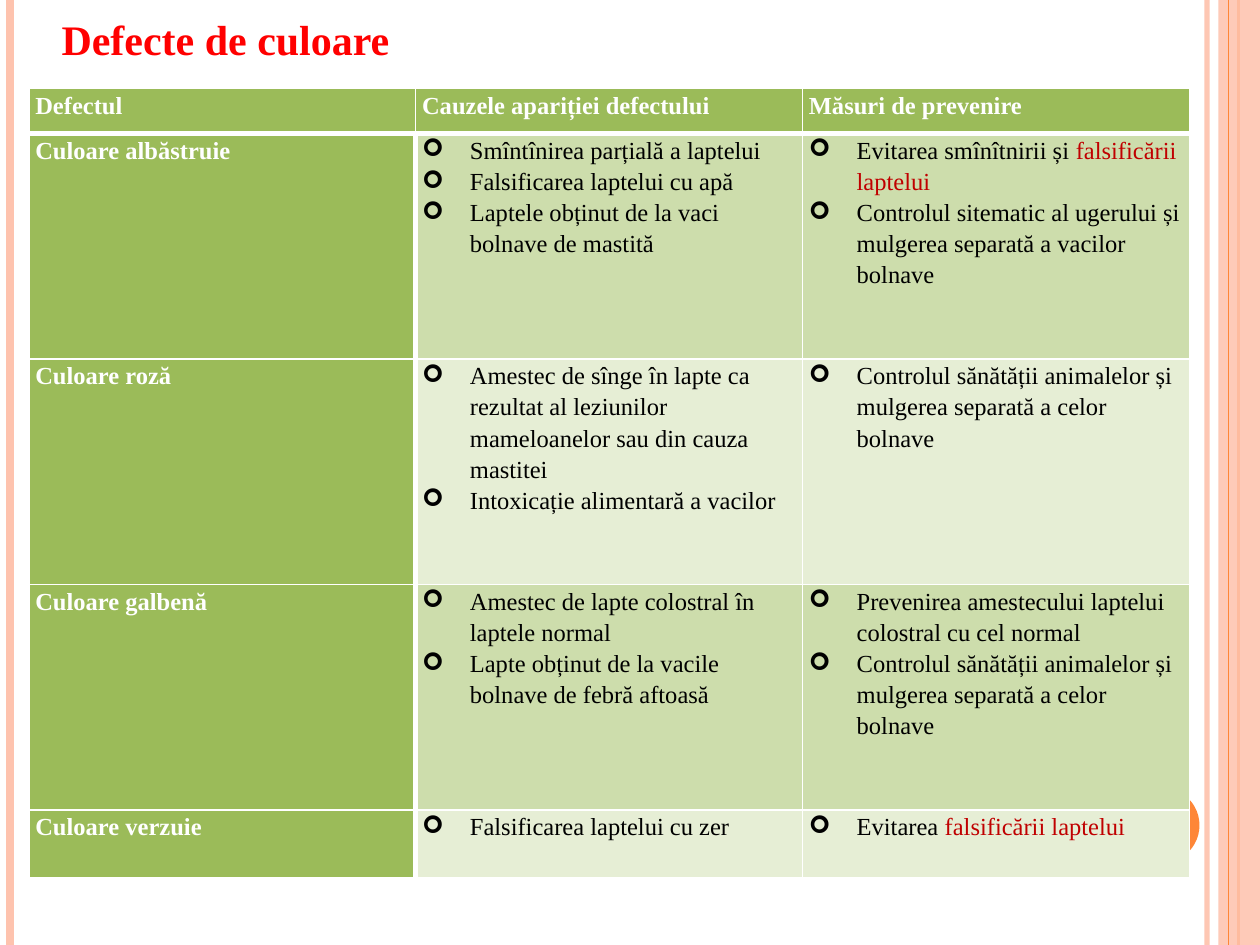
from lxml import etree
from pptx import Presentation
from pptx.dml.color import RGBColor
from pptx.enum.shapes import MSO_CONNECTOR, MSO_SHAPE
from pptx.oxml.ns import qn
from pptx.util import Inches, Pt

LINE = MSO_CONNECTOR.STRAIGHT
RECT, OVAL = MSO_SHAPE.RECTANGLE, MSO_SHAPE.OVAL

THEME = {
    "font": "Times New Roman", "title": 24, "body": 14, "space": 1.15,
    "red": "FF0000", "dark": "C00000", "ink": "000000", "white": "FFFFFF",
    "green": "9BBB59", "bands": ("CDDDAC", "E6EED5"),
    "peach": "FEC3AE", "orange": "FE8637",
}

# Content: text between asterisks is stressed in dark red
TITLE = "Defecte de culoare"
HEAD = ("Defectul", "Cauzele apariției defectului", "Măsuri de prevenire")
ROWS = [
    ("Culoare albăstruie",
     ["Smîntînirea parțială a laptelui",
      "Falsificarea laptelui cu apă",
      "Laptele obținut de la vaci bolnave de mastită"],
     ["Evitarea smînîtnirii și *falsificării laptelui*",
      "Controlul sitematic al ugerului și mulgerea separată a vacilor bolnave"]),
    ("Culoare roză",
     ["Amestec de sînge în lapte ca rezultat al leziunilor mameloanelor "
      "sau din cauza mastitei",
      "Intoxicație alimentară a vacilor"],
     ["Controlul sănătății animalelor și mulgerea separată a celor bolnave"]),
    ("Culoare galbenă",
     ["Amestec de lapte colostral în laptele normal",
      "Lapte obținut de la vacile bolnave de febră aftoasă"],
     ["Prevenirea amestecului laptelui colostral cu cel normal",
      "Controlul sănătății animalelor și mulgerea separată a celor bolnave"]),
    ("Culoare verzuie",
     ["Falsificarea laptelui cu zer"],
     ["Evitarea *falsificării laptelui*"]),
]
COL = 3.07
HIGH = (0.36, 1.79, 1.79, 1.79, 0.54)
# Upright lines: x, width, colour, opacity in percent
RIGHT = [(9.58, 3, "peach", 93), (0.08, 4.5, "peach", 100),
         (9.83, 1.5, "orange", 100)]
THIN = (9.75, 0.75, "orange", 100)


def rgb(name):
    return RGBColor.from_string(THEME.get(name, name))


def fade(part, pct):
    """Set the opacity of the first colour found in a part."""
    if pct < 100:
        tone = next(part.iter(qn("a:srgbClr")))
        etree.SubElement(tone, qn("a:alpha"), val=str(pct * 1000))


def write(frame, lines, size=THEME["body"], color="ink", bold=False,
          bullet=None, indent=0, before=0):
    """Fill a text frame with one paragraph a line."""
    frame.word_wrap = True
    for n, line in enumerate(lines):
        para = frame.add_paragraph() if n else frame.paragraphs[0]
        para.line_spacing = THEME["space"]
        para.space_before = Pt(before)
        props = para._p.get_or_add_pPr()
        props.set("marL", str(Inches(indent)))
        props.set("indent", str(-Inches(indent)))
        if bullet:
            etree.SubElement(props, qn("a:buFont"), typeface="Wingdings")
            etree.SubElement(props, qn("a:buChar"), char=bullet)
        for k, part in enumerate(line.split("*")):
            if part:
                run = para.add_run()
                run.text = part
                font = run.font
                font.name, font.size, font.bold = THEME["font"], Pt(size), bold
                font.color.rgb = rgb("dark" if k % 2 else color)


def rule(shapes, x, width, color, pct):
    """Draw a full-height line."""
    bar = shapes.add_connector(LINE, Inches(x), 0, Inches(x), Inches(7.5))
    bar.line.color.rgb, bar.line.width = rgb(color), Pt(width)
    fade(bar._element.spPr, pct)
    etree.SubElement(bar._element.spPr, qn("a:effectLst"))


def block(shapes, kind, box, color, pct=100):
    item = shapes.add_shape(kind, *map(Inches, box))
    item.shadow.inherit = False
    item.fill.solid()
    item.fill.fore_color.rgb = rgb(color)
    item.line.fill.background()
    fade(item._element.spPr, pct)


def paint(cell, color, edges):
    """Set margins, white borders (left, right, top, bottom) and fill."""
    cell.margin_left = cell.margin_right = Inches(0.05)
    cell.margin_top = cell.margin_bottom = 0
    props = cell._tc.get_or_add_tcPr()
    for side, width in zip("LRTB", edges):
        edge = etree.SubElement(props, qn("a:ln" + side), w=str(Pt(width)))
        fill = etree.SubElement(edge, qn("a:solidFill"))
        etree.SubElement(fill, qn("a:srgbClr"), val=THEME["white"])
    cell.fill.solid()
    cell.fill.fore_color.rgb = rgb(color)


def grid(shapes):
    """Build the table of defects, causes and measures."""
    table = shapes.add_table(len(HIGH), len(HEAD), Inches(0.23), Inches(0.7),
                             Inches(COL * 3), Inches(sum(HIGH))).table
    for col in table.columns:
        col.width = Inches(COL)
    for row, high in zip(table.rows, HIGH):
        row.height = Inches(high)
    for r, row in enumerate([HEAD] + ROWS):
        for c, text in enumerate(row):
            cell = table.cell(r, c)
            label = r == 0 or c == 0
            # Thick edges part the header row and the label column
            edges = (3 if r and c == 1 else 1, 3 if r and c == 0 else 1,
                     3 if r == 1 else 1, 3 if r == 0 else 1)
            paint(cell, "green" if label else THEME["bands"][(r - 1) % 2],
                  edges)
            if label:
                write(cell.text_frame, [text], color="white", bold=True)
            else:
                write(cell.text_frame, text, bullet="➢", indent=0.38)


def main():
    deck = Presentation()
    deck.slide_width, deck.slide_height = Inches(10), Inches(7.5)
    shapes = deck.slides.add_slide(deck.slide_layouts[6]).shapes

    # Side stripes and dot
    for spec in RIGHT:
        rule(shapes, *spec)
    block(shapes, RECT, (9.67, 0, 0.33, 7.5), "peach", 87)
    rule(shapes, *THIN)
    block(shapes, OVAL, (8.92, 6.25, 0.6, 0.6), "orange")

    # Title
    box = shapes.add_textbox(*map(Inches, (0.39, 0, 8.17, 0.59)))
    write(box.text_frame, [TITLE], size=THEME["title"], color="red",
          bold=True, indent=0.3, before=6)

    grid(shapes)
    deck.save("out.pptx")


if __name__ == "__main__":
    main()
